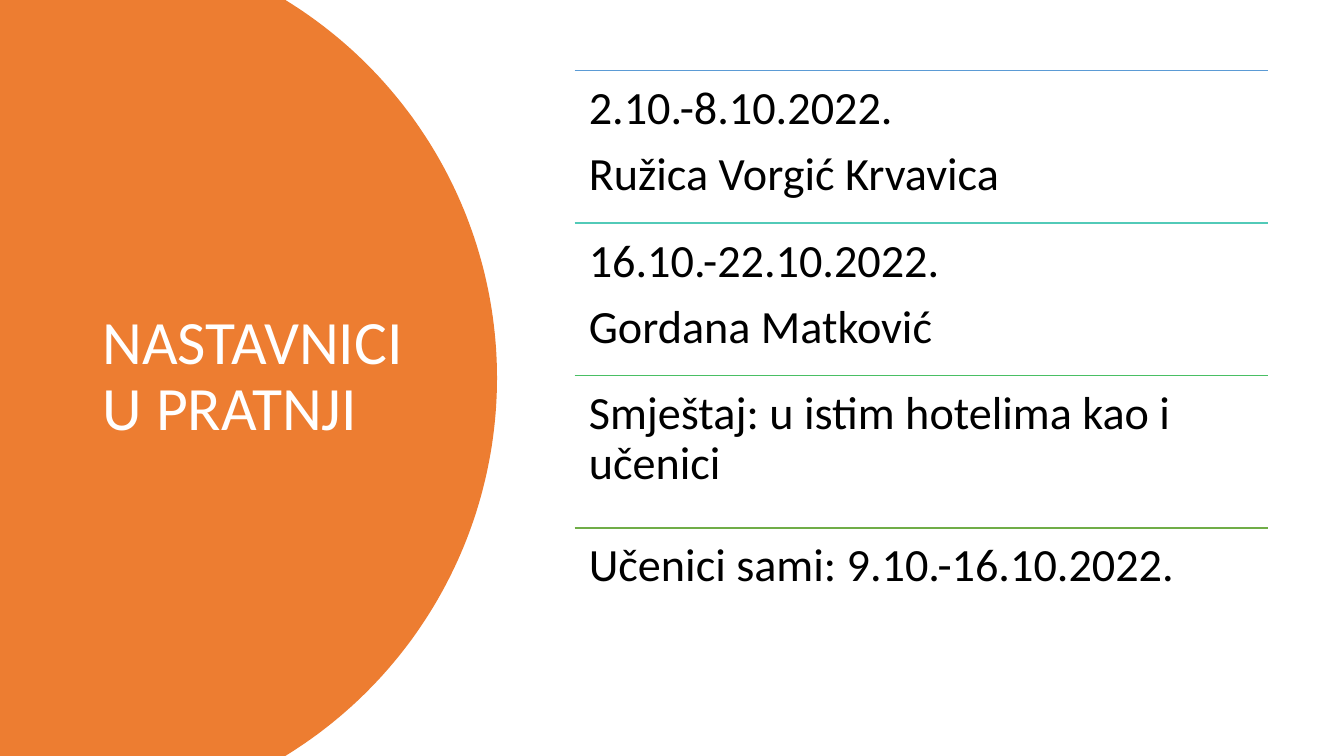
import dataclasses
import math
import lxml.etree
import pptx
import pptx.dml.color
import pptx.enum.shapes
import pptx.enum.text
import pptx.oxml.ns
import pptx.shapes.shapetree
import pptx.util

WIDE = pptx.util.Inches(13.33)
HIGH = pptx.util.Inches(7.5)
COLS = 133.3
ROWS = 75


@dataclasses.dataclass(frozen=True)
class Theme:
    font: str = "Calibri"
    disc: str = "ED7D31"
    light: str = "FFFFFF"
    dark: str = "000000"
    title: float = 44
    body: float = 33
    rule: float = 1
    lead: float = 0.9
    gap: float = 0.35


@dataclasses.dataclass(frozen=True)
class Box:
    left: float
    top: float
    width: float
    height: float


@dataclasses.dataclass(frozen=True)
class Entry:
    text: str
    tint: str


THEME = Theme()
TITLE = Box(9.2, 7, 32.3, 60.9)
LIST = Box(57, 7, 68.8, 60.5)
ENTRIES = (
    Entry("2.10.-8.10.2022.\nRužica Vorgić Krvavica", "5B9BD5"),
    Entry("16.10.-22.10.2022.\nGordana Matković", "52CAB8"),
    Entry("Smještaj: u istim hotelima kao i učenici", "49BF64"),
    Entry("Učenici sami: 9.10.-16.10.2022.", "70AD47"),
)


def col(count: float) -> int:
    return round(WIDE * count / COLS)


def row(count: float) -> int:
    return round(HIGH * count / ROWS)


def paint(code: str) -> pptx.dml.color.RGBColor:
    return pptx.dml.color.RGBColor.from_string(code)


def draw_disc(shapes: pptx.shapes.shapetree.SlideShapes) -> None:
    edge, chord, half = col(49.3), col(28.3), HIGH / 2
    depth = edge - chord
    radius = (half ** 2 + depth ** 2) / (2 * depth)
    sweep = math.asin(half / radius)
    steps = 120
    angles = [sweep * (2 * i / steps - 1) for i in range(steps + 1)]
    arc = [
        (round(edge - radius + radius * math.cos(a)),
         round(half + radius * math.sin(a)))
        for a in angles
    ]
    pen = shapes.build_freeform(0, 0)
    pen.add_line_segments([*arc, (0, HIGH)], close=True)
    disc = pen.convert_to_shape()
    disc.shadow.inherit = False
    disc.fill.solid()
    disc.fill.fore_color.rgb = paint(THEME.disc)
    disc.line.fill.background()


def draw_text(
    shapes: pptx.shapes.shapetree.SlideShapes,
    box: Box,
    text: str,
    size: float,
    tint: str,
    anchor: pptx.enum.text.MSO_ANCHOR,
    inset: float,
    gap: float,
) -> None:
    area = shapes.add_textbox(
        col(box.left), row(box.top), col(box.width), row(box.height)
    )
    frame = area.text_frame
    frame.text = text
    frame.word_wrap = True
    frame.vertical_anchor = anchor
    frame.margin_left = frame.margin_right = col(inset)
    frame.margin_top = frame.margin_bottom = row(inset)
    for line in frame.paragraphs:
        line.line_spacing = THEME.lead
        line.space_after = pptx.util.Pt(size * gap)
        for run in line.runs:
            run.font.name = THEME.font
            run.font.size = pptx.util.Pt(size)
            run.font.color.rgb = paint(tint)


def draw_rule(
    shapes: pptx.shapes.shapetree.SlideShapes, box: Box, tint: str
) -> None:
    rule = shapes.add_connector(
        pptx.enum.shapes.MSO_CONNECTOR.STRAIGHT,
        col(box.left), row(box.top),
        col(box.left + box.width), row(box.top),
    )
    rule.line.color.rgb = paint(tint)
    rule.line.width = pptx.util.Pt(THEME.rule)
    props = rule.element.find(pptx.oxml.ns.qn("p:spPr"))
    lxml.etree.SubElement(props, pptx.oxml.ns.qn("a:effectLst"))


def main() -> None:
    deck = pptx.Presentation()
    deck.slide_width, deck.slide_height = WIDE, HIGH
    shapes = deck.slides.add_slide(deck.slide_layouts[6]).shapes
    draw_disc(shapes)
    draw_text(
        shapes, TITLE, "NASTAVNICI U PRATNJI", THEME.title, THEME.light,
        pptx.enum.text.MSO_ANCHOR.MIDDLE, 1, 0,
    )
    pitch = LIST.height / len(ENTRIES)
    for i, entry in enumerate(ENTRIES):
        cell = Box(LIST.left, LIST.top + i * pitch, LIST.width, pitch)
        draw_rule(shapes, cell, entry.tint)
        draw_text(
            shapes, cell, entry.text, THEME.body, THEME.dark,
            pptx.enum.text.MSO_ANCHOR.TOP, 1.4, THEME.gap,
        )
    deck.save("out.pptx")


if __name__ == "__main__":
    main()
